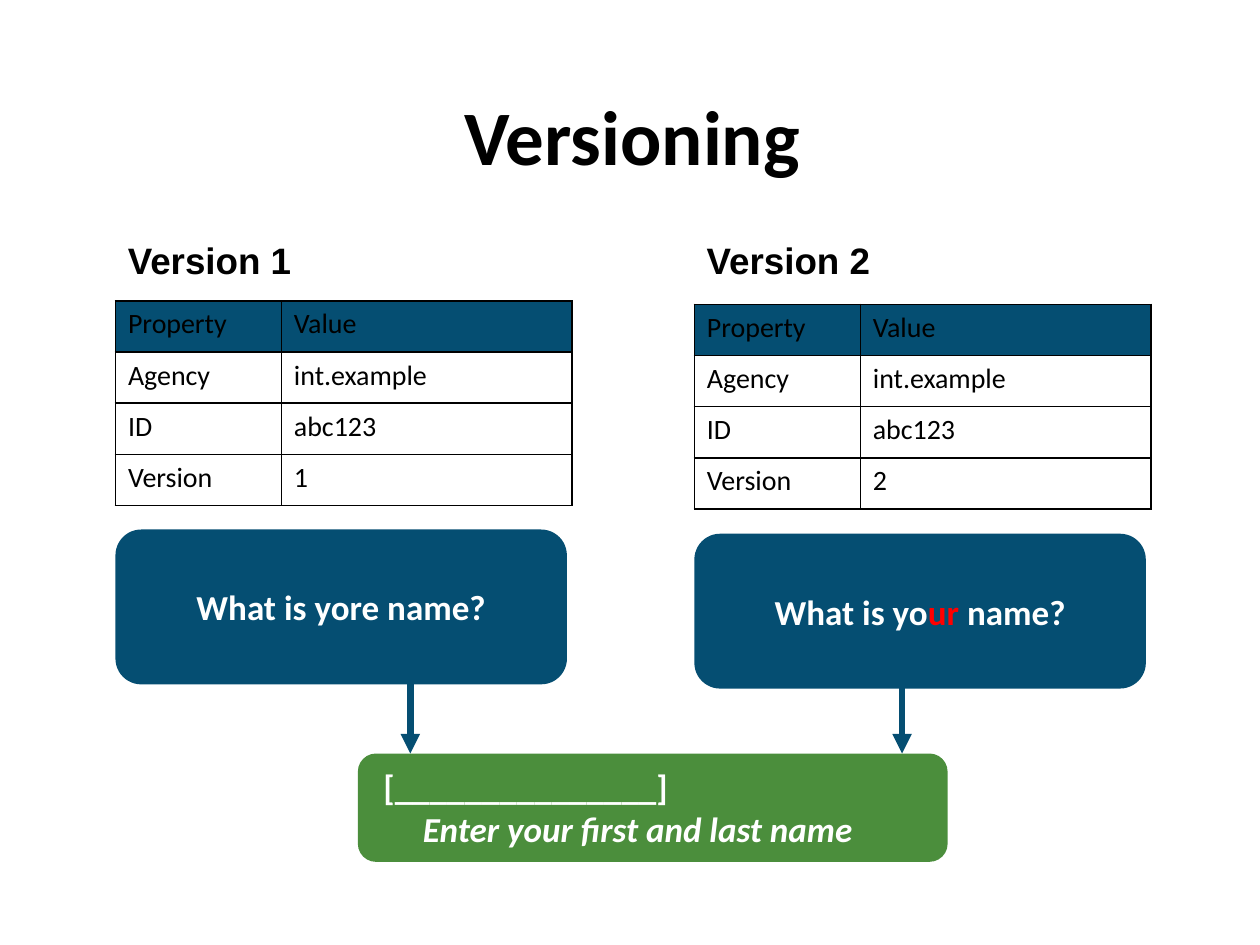
from lxml import etree
from pptx import Presentation
from pptx.dml.color import RGBColor
from pptx.enum.shapes import MSO_CONNECTOR, MSO_SHAPE
from pptx.enum.text import MSO_ANCHOR, PP_ALIGN
from pptx.oxml.ns import qn
from pptx.util import Pt

STRAIGHT = MSO_CONNECTOR.STRAIGHT
ROUNDED = MSO_SHAPE.ROUNDED_RECTANGLE
MIDDLE = MSO_ANCHOR.MIDDLE
LEFT, CENTER = PP_ALIGN.LEFT, PP_ALIGN.CENTER
BLUE, GREEN, RED = "054E72", "4B8E3C", "FF0000"
BLACK, WHITE = "000000", "FFFFFF"


def rgb(value):
    return RGBColor.from_string(value)


def style(p, size, color, bold=True, name="Calibri", align=LEFT):
    p.alignment = align
    f = p.font
    f.size, f.bold, f.name = Pt(size), bold, name
    f.color.rgb = rgb(color)


def add_text(slide, text, x, y, w, h, size, name, align=LEFT):
    tf = slide.shapes.add_textbox(Pt(x), Pt(y), Pt(w), Pt(h)).text_frame
    tf.word_wrap = True
    tf.vertical_anchor = MIDDLE
    p = tf.paragraphs[0]
    p.text = text
    p.line_spacing = 0.9
    style(p, size, BLACK, name=name, align=align)


def add_box(slide, x, y, w, h, color):
    s = slide.shapes.add_shape(ROUNDED, Pt(x), Pt(y), Pt(w), Pt(h))
    s.shadow.inherit = False
    s.fill.solid()
    s.fill.fore_color.rgb = rgb(color)
    s.line.fill.background()
    tf = s.text_frame
    tf.word_wrap = True
    tf.vertical_anchor = MIDDLE
    return tf


def add_question(slide, x, y, parts):
    p = add_box(slide, x, y, 258, 88.5, BLUE).paragraphs[0]
    style(p, 20, WHITE, align=CENTER)
    for text, color in parts:
        r = p.add_run()
        r.text = text
        r.font.color.rgb = rgb(color)


def add_answer(slide):
    tf = add_box(slide, 204.5, 430.6, 337, 61.9, GREEN)
    lines = [("[_______________]", 4.5, False),
             ("Enter your first and last name", 27, True)]
    for i, (text, indent, italic) in enumerate(lines):
        p = tf.add_paragraph() if i else tf.paragraphs[0]
        p.text = text
        style(p, 20, WHITE)
        p.font.italic = italic
        p._p.get_or_add_pPr().set("marL", str(Pt(indent)))


def add_arrow(slide, x, y1, y2):
    c = slide.shapes.add_connector(STRAIGHT, Pt(x), Pt(y1), Pt(x), Pt(y2))
    c.line.color.rgb = rgb(BLUE)
    c.line.width = Pt(3.75)
    etree.SubElement(c.line._get_or_add_ln(), qn("a:tailEnd"), type="triangle")
    etree.SubElement(c._element.spPr, qn("a:effectLst"))


def add_borders(cell):
    tc_pr = cell._tc.get_or_add_tcPr()
    for side in ("lnL", "lnR", "lnT", "lnB"):
        ln = etree.SubElement(tc_pr, qn(f"a:{side}"), w=str(Pt(1)))
        fill = etree.SubElement(ln, qn("a:solidFill"))
        etree.SubElement(fill, qn("a:srgbClr"), val=BLACK)


def add_properties(slide, x, y, version):
    rows = [("Property", "Value"), ("Agency", "int.example"),
            ("ID", "abc123"), ("Version", version)]
    table = slide.shapes.add_table(
        len(rows), 2, Pt(x), Pt(y), Pt(261), Pt(116.8)).table
    table.first_row = table.horz_banding = False
    for col, width in zip(table.columns, (94.8, 166.2)):
        col.width = Pt(width)
    for i, row in enumerate(rows):
        for j, text in enumerate(row):
            cell = table.cell(i, j)
            add_borders(cell)
            if i == 0:
                cell.fill.solid()
                cell.fill.fore_color.rgb = rgb(BLUE)
            else:
                cell.fill.background()
            p = cell.text_frame.paragraphs[0]
            p.text = text
            style(p, 16, BLACK, bold=False)


def main():
    prs = Presentation()
    prs.slide_width, prs.slide_height = Pt(720), Pt(540)
    slide = prs.slides.add_slide(prs.slide_layouts[6])
    add_text(slide, "Versioning", 49.5, 28, 623.5, 104.5, 44, "Calibri", CENTER)
    versions = [
        ("1", 66, 172, 302.6, 234.5, [("What is yore name?", WHITE)]),
        ("2", 396.8, 174, 305, 515.5,
         [("What is yo", WHITE), ("ur", RED), (" name?", WHITE)]),
    ]
    for number, x, table_y, box_y, arrow_x, question in versions:
        add_arrow(slide, arrow_x, box_y + 70, 430.6)
        add_text(slide, f"Version {number}", x, 135, 258, 30, 21, "Arial")
        add_properties(slide, x, table_y, number)
        add_question(slide, x, box_y, question)
    add_answer(slide)
    prs.save("out.pptx")


if __name__ == "__main__":
    main()
